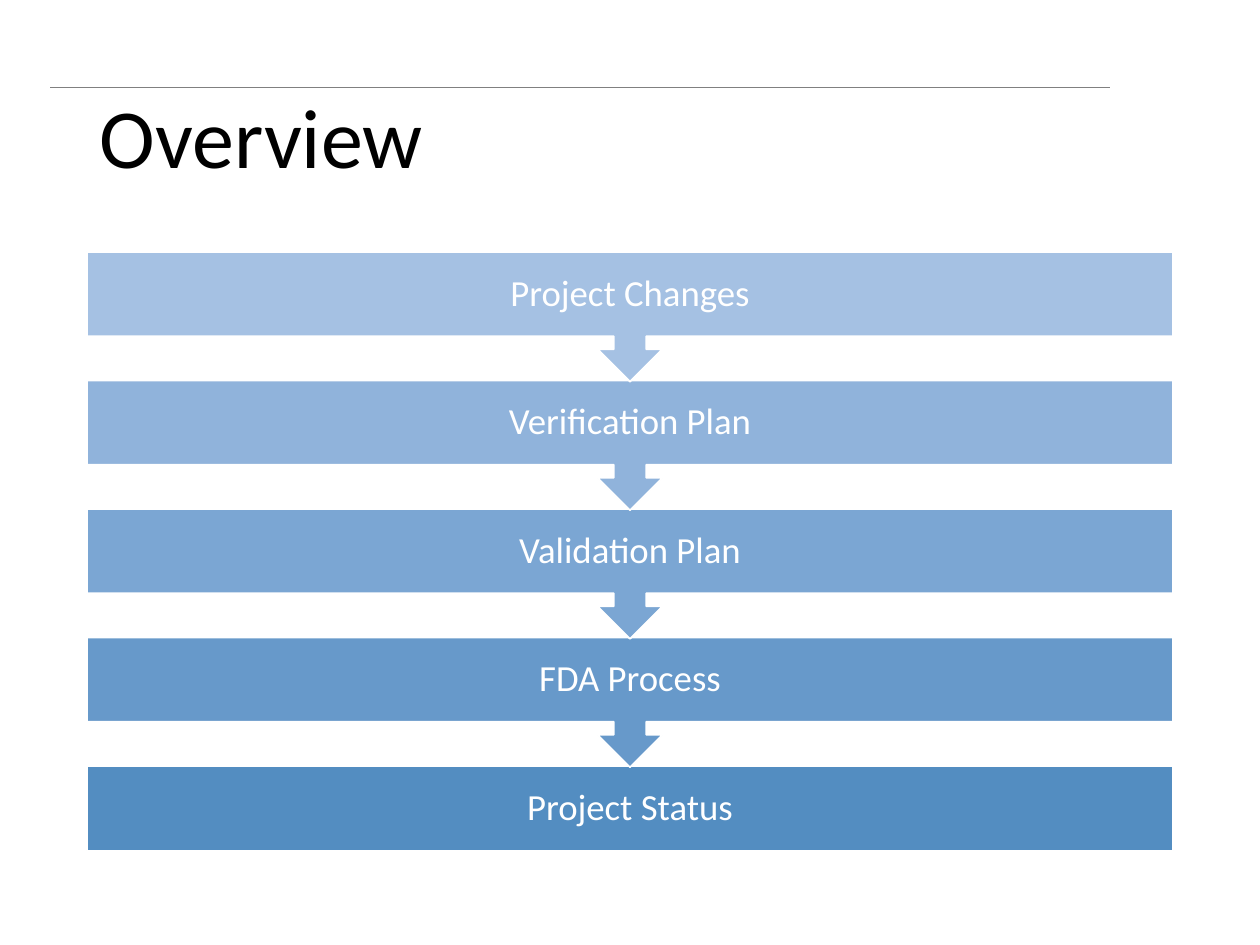
from dataclasses import dataclass

from lxml import etree
from pptx import Presentation
from pptx.dml.color import RGBColor
from pptx.enum.shapes import MSO_CONNECTOR, MSO_SHAPE
from pptx.enum.text import MSO_ANCHOR, MSO_AUTO_SIZE, PP_ALIGN
from pptx.oxml.ns import qn
from pptx.util import Inches, Pt

RECT = MSO_SHAPE.RECTANGLE
CALLOUT = MSO_SHAPE.DOWN_ARROW_CALLOUT
STRAIGHT = MSO_CONNECTOR.STRAIGHT
MIDDLE = MSO_ANCHOR.MIDDLE
NO_AUTOFIT = MSO_AUTO_SIZE.NONE
LEFT, CENTER = PP_ALIGN.LEFT, PP_ALIGN.CENTER

FONT = "Calibri"
MARGIN, WIDTH = 0.69, 8.62
FIRST_TOP, STEP = 2.0, 1.02
BOX_HEIGHT, CALLOUT_HEIGHT = 0.67, 1.03
INSET = 0.16


@dataclass
class Step:
    label: str
    color: str


STEPS = [
    Step("Project Changes", "A5C1E3"),
    Step("Verification Plan", "90B3DB"),
    Step("Validation Plan", "7BA6D3"),
    Step("FDA Process", "6799CA"),
    Step("Project Status", "538DC1"),
]


def rgb(color: str) -> RGBColor:
    return RGBColor.from_string(color)


def set_text(tf, text: str, size: float, color: str, align) -> None:
    frame = {"word_wrap": True, "auto_size": NO_AUTOFIT, "vertical_anchor": MIDDLE}
    for name, value in frame.items():
        setattr(tf, name, value)
    p = tf.paragraphs[0]
    p.alignment = align
    p.line_spacing = 0.9
    r = p.add_run()
    r.text = text
    for name, value in {"name": FONT, "size": Pt(size), "bold": False}.items():
        setattr(r.font, name, value)
    r.font.color.rgb = rgb(color)


def add_title(s, text: str) -> None:
    title = s.shapes.title
    place = {"left": MARGIN, "top": 0.4, "width": WIDTH, "height": 1.45}
    for name, value in place.items():
        setattr(title, name, Inches(value))
    set_text(title.text_frame, text, 48, "000000", LEFT)


def add_rule(s) -> None:
    """Draw the thin line above the title."""
    y = Inches(0.69)
    line = s.shapes.add_connector(STRAIGHT, Inches(0.4), y, Inches(8.81), y)
    line.line.color.rgb = rgb("808080")
    line.line.width = Pt(0.25)
    etree.SubElement(line._element.spPr, qn("a:effectLst"))


def add_step(s, step: Step, top: float, is_last: bool) -> None:
    kind, height = (RECT, BOX_HEIGHT) if is_last else (CALLOUT, CALLOUT_HEIGHT)
    sp = s.shapes.add_shape(
        kind, Inches(MARGIN), Inches(top), Inches(WIDTH), Inches(height)
    )
    sp.shadow.inherit = False
    sp.fill.solid()
    sp.fill.fore_color.rgb = rgb(step.color)
    sp.line.color.rgb = rgb("FFFFFF")
    sp.line.width = Pt(1)
    tf = sp.text_frame
    for side in ("left", "top", "right", "bottom"):
        setattr(tf, f"margin_{side}", Inches(INSET))
    set_text(tf, step.label, 21, "FFFFFF", CENTER)


def main() -> None:
    prs = Presentation()
    prs.slide_width, prs.slide_height = Inches(10), Inches(7.5)
    s = prs.slides.add_slide(prs.slide_layouts[5])
    add_rule(s)
    add_title(s, "Overview")
    last = len(STEPS) - 1
    # Bottom step first, so that each arrow tip lies over the box below it.
    for i in range(last, -1, -1):
        add_step(s, STEPS[i], FIRST_TOP + i * STEP, i == last)
    prs.save("out.pptx")


if __name__ == "__main__":
    main()
